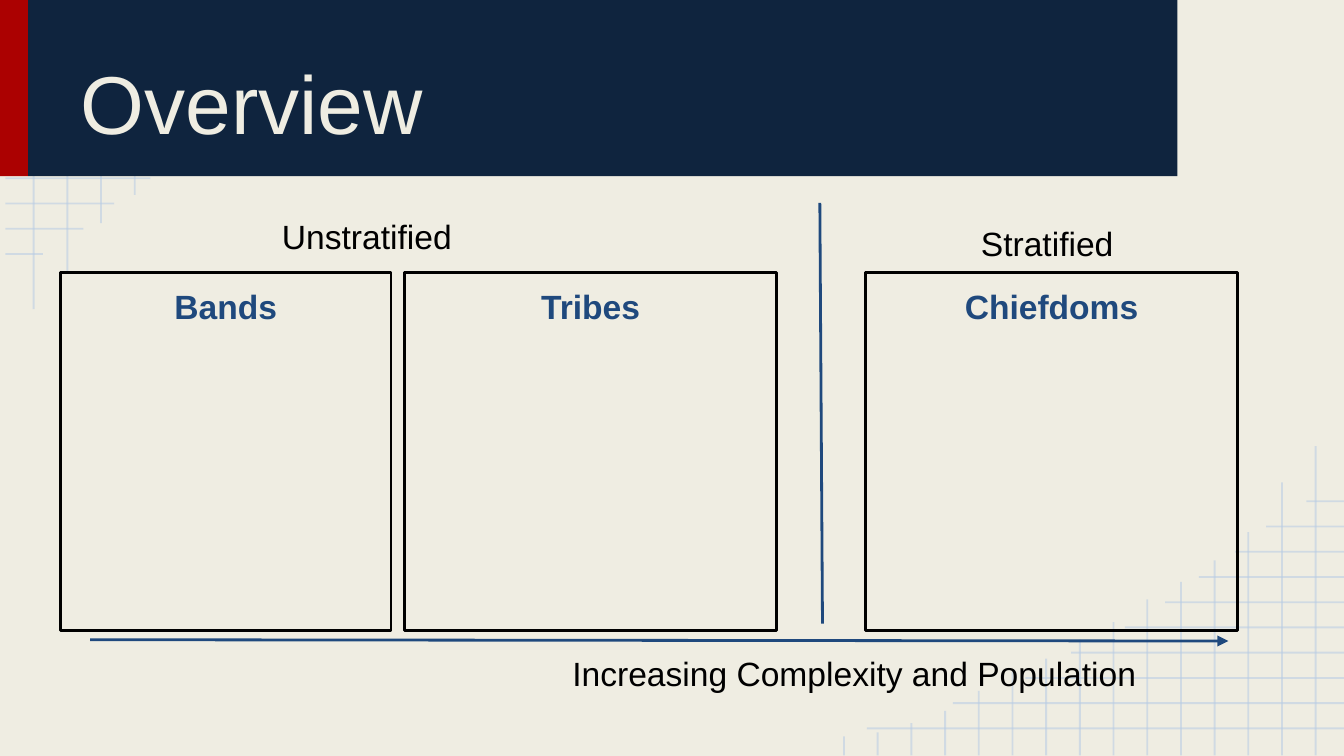
import pptx
import pptx.util
import pptx.dml.color
import pptx.enum.shapes
import pptx.enum.text
import pptx.oxml.ns
from lxml import etree

Inches, Pt = pptx.util.Inches, pptx.util.Pt
ALIGN, ANCHOR = pptx.enum.text.PP_ALIGN, pptx.enum.text.MSO_ANCHOR
WIDTH, HEIGHT = 10, 5.62
COLORS = {"paper": "EFEDE2", "grid": "B7CCE4", "red": "AB0101",
          "navy": "0F243E", "blue": "1F497D", "black": "000000"}

# Content: text, left, top, width, height
TITLE = ("Overview", 0.5, 0.11, 8, 1.11)
BOX_TOP, BOX_HEIGHT = 2.03, 2.66
SOCIETIES = [("Bands", 0.45, 2.46), ("Chiefdoms", 6.44, 2.77), ("Tribes", 3.01, 2.77)]
LABELS = [("Increasing Complexity and Population", 4.16, 4.76, 5.11, 0.54),
          ("Unstratified", 2, 1.51, 2.46, 0.3),
          ("Stratified", 7.2, 1.56, 1.98, 0.27)]
BANNER = [("red", 0, 0.21), ("navy", 0.21, 8.55)]
COMPLEXITY_ARROW = (0.67, 4.76, 9.14, 4.77)
DIVIDER = (6.1, 1.51, 6.12, 4.64)

# Corner grid: reach of each row to the right and of each column downwards
ROW_ENDS = [3.59, 2.95, 2.41, 2.07, 1.67, 1.37, 1.12, 0.85, 0.62, 0.32]
COLUMN_ENDS = [2.3, 2.03, 1.66, 1.45, 1.29, 1.16, 0.99, 0.86,
               0.72, 0.62, 0.48, 0.33, 0.24, 0.17, 0.14]
GRID_LEFT, ROW_START, ROW_STEP, COLUMN_STEP = 0.04, 0.2, 1.69 / 9, 3.76 / 15


def rgb(name):
    return pptx.dml.color.RGBColor.from_string(COLORS[name])


def add_element(parent, tag, **attributes):
    return etree.SubElement(parent, pptx.oxml.ns.qn(tag), **attributes)


def add_line(shapes, ends, color, width):
    line = shapes.add_connector(pptx.enum.shapes.MSO_CONNECTOR.STRAIGHT,
                                *[Inches(value) for value in ends])
    line.line.color.rgb = rgb(color)
    line.line.width = Pt(width)
    add_element(line._element.spPr, "a:effectLst")
    return line


def place(shape, *box):
    shape.left, shape.top, shape.width, shape.height = [Inches(v) for v in box]


def write(shape, text, size, color, align=ALIGN.LEFT, anchor=ANCHOR.TOP, bold=False):
    frame = shape.text_frame
    frame.text = text
    frame.word_wrap = True
    frame.auto_size = pptx.enum.text.MSO_AUTO_SIZE.NONE
    frame.vertical_anchor = anchor
    frame.margin_left = frame.margin_right = Inches(0.1)
    frame.margin_top = frame.margin_bottom = Inches(0.1)
    paragraph = frame.paragraphs[0]
    paragraph.alignment = align
    paragraph.space_before = Pt(0)
    font = paragraph.font
    font.name, font.size, font.bold = "Arial", Pt(size), bold
    font.color.rgb = rgb(color)
    return paragraph


presentation = pptx.Presentation()
presentation.slide_width = Inches(WIDTH)
presentation.slide_height = Inches(WIDTH) * 9 // 16
slide = presentation.slides.add_slide(presentation.slide_layouts[4])
slide.background.fill.solid()
slide.background.fill.fore_color.rgb = rgb("paper")
title, *bodies = list(slide.placeholders)

# Corner grids: the lower right one is the upper left one turned half round
grid = [(GRID_LEFT, ROW_START + i * ROW_STEP, end, ROW_START + i * ROW_STEP)
        for i, end in enumerate(ROW_ENDS)]
grid += [(i * COLUMN_STEP, end, i * COLUMN_STEP, 0)
         for i, end in enumerate(COLUMN_ENDS, 1)]
turned = [(WIDTH + GRID_LEFT - x1, HEIGHT - y1, WIDTH + GRID_LEFT - x2, HEIGHT - y2)
          for x1, y1, x2, y2 in grid]
for corner in (grid, turned):
    group = slide.shapes.add_group_shape()
    for ends in corner:
        line = add_line(group.shapes, ends, "grid", 1)
        color = line._element.spPr.find(".//" + pptx.oxml.ns.qn("a:srgbClr"))
        add_element(color, "a:alpha", val="54000")

# Banner
for color, left, width in BANNER:
    bar = slide.shapes.add_shape(pptx.enum.shapes.MSO_SHAPE.RECTANGLE, 0, 0, 0, 0)
    place(bar, left, -0.01, width, 1.32)
    bar.shadow.inherit = False
    bar.fill.solid()
    bar.fill.fore_color.rgb = rgb(color)
    bar.line.fill.background()

# Title and society boxes, brought in front of the banner and grids
tree = title._element.getparent()
tree.append(title._element)
place(title, *TITLE[1:])
write(title, TITLE[0], 44, "paper", anchor=ANCHOR.BOTTOM)
for body, (name, left, width) in zip(bodies, SOCIETIES):
    tree.append(body._element)
    place(body, left, BOX_TOP, width, BOX_HEIGHT)
    body.line.color.rgb = rgb("black")
    body.line.width = Pt(1.5)
    paragraph = write(body, name, 18, "blue", ALIGN.CENTER, bold=True)
    properties = paragraph._p.get_or_add_pPr()
    properties.set("marL", "0")
    properties.set("indent", "0")
    properties.insert_element_before(
        properties.makeelement(pptx.oxml.ns.qn("a:buNone")),
        "a:tabLst", "a:defRPr", "a:extLst")
for spare in bodies[len(SOCIETIES):]:
    tree.remove(spare._element)

# Arrow, divider and labels
arrow = add_line(slide.shapes, COMPLEXITY_ARROW, "blue", 1.5)
add_element(arrow.line._get_or_add_ln(), "a:tailEnd", type="triangle")
add_line(slide.shapes, DIVIDER, "blue", 1.5)
for text, *box in LABELS:
    label = slide.shapes.add_textbox(*[Inches(value) for value in box])
    write(label, text, 18, "black")

presentation.save("out.pptx")
